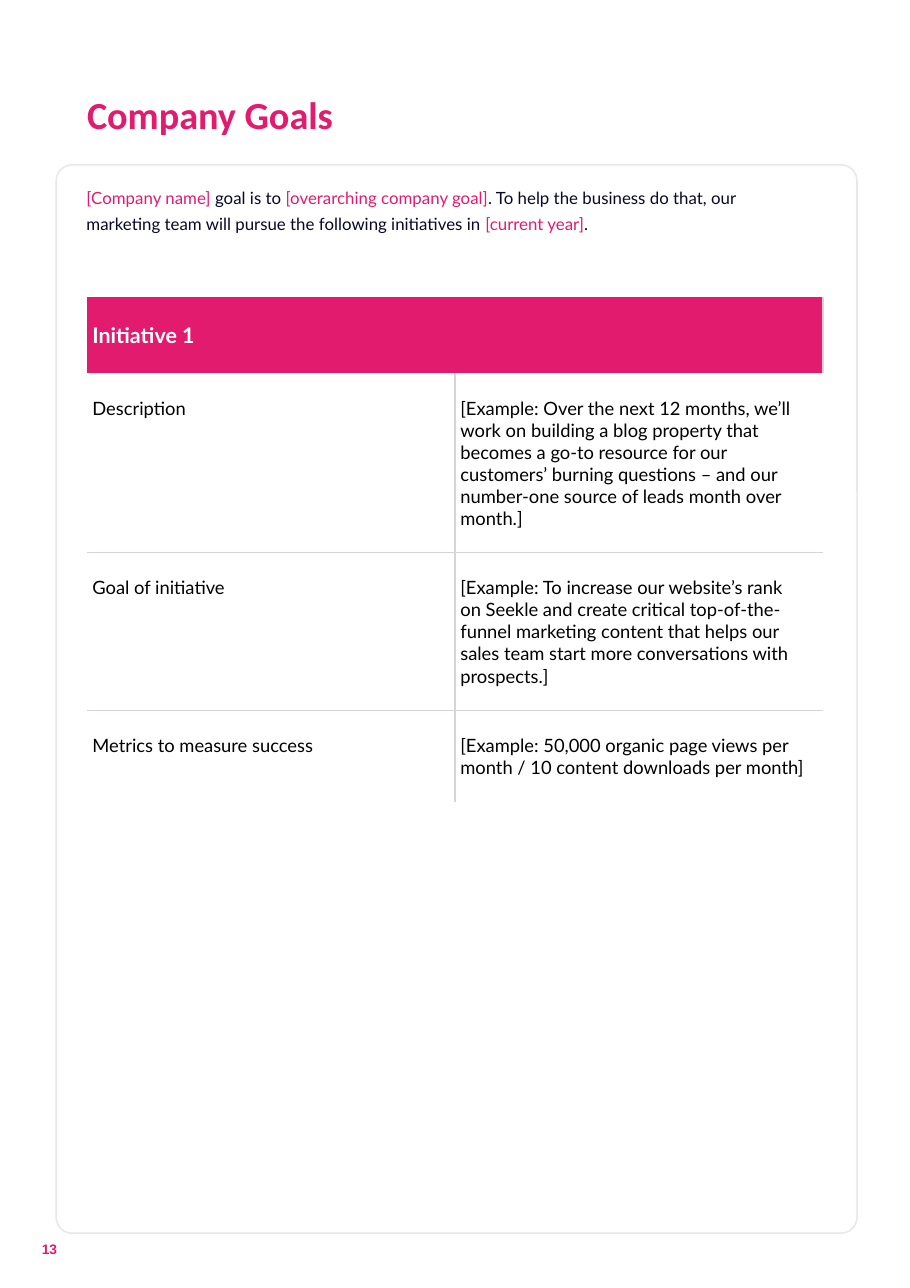
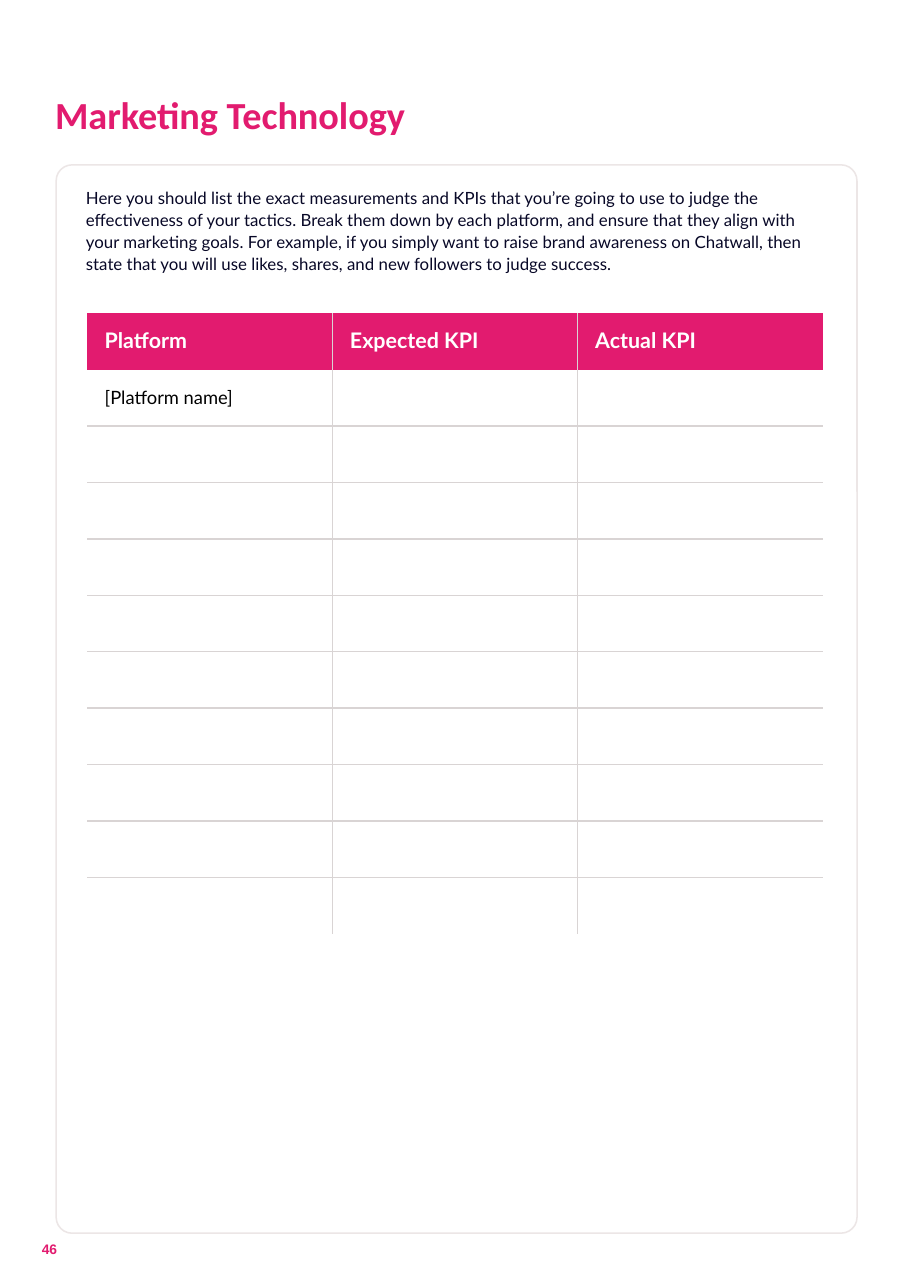
from lxml import etree
from pptx import Presentation
from pptx import util as u
from pptx.dml.color import RGBColor
from pptx.enum import shapes, text
from pptx.oxml.ns import qn

COLORS = {"accent": "E21B6F", "ink": "080827", "cell": "000000",
          "white": "FFFFFF", "frame": "ECE6E6", "rule": "D9D4D4"}
WIDTH, HEIGHT = u.Inches(8.26), u.Inches(11.69)
GRID = 100  # columns across and rows down the page
NO_STYLE = "{2D5ABB26-0587-4C30-8999-92F81FD0307C}"
TABLE_LEFT, TABLE_WIDTH = 9.56, 80.87


def col(n):
    return u.Emu(round(WIDTH * n / GRID))


def row(n):
    return u.Emu(round(HEIGHT * n / GRID))


def rgb(name):
    return RGBColor.from_string(COLORS[name])


class Page:
    """Holds the shared style and the current slide."""

    def __init__(self, prs, title, title_left, number):
        self.slide = prs.slides.add_slide(prs.slide_layouts[5])
        self.panel()
        self.title(title, title_left)
        self.textbox([(str(number), "accent")], 4.6, 96.5, 3, 1.28, 9,
                     font="Arial", bold=True, spacing=u.Pt(9.2), top=0)

    def style(self, r, size, color, font="Lato", bold=False):
        r.font.name, r.font.size, r.font.bold = font, u.Pt(size), bold
        r.font.color.rgb = rgb(color)

    def frame(self, tf, top):
        tf.word_wrap = True
        tf.auto_size = text.MSO_AUTO_SIZE.NONE
        tf.vertical_anchor = text.MSO_ANCHOR.TOP
        tf.margin_left = tf.margin_right = tf.margin_bottom = 0
        tf.margin_top = row(top)

    def panel(self):
        sp = self.slide.shapes.add_shape(
            shapes.MSO_SHAPE.ROUNDED_RECTANGLE,
            col(6.17), row(12.8), col(88.01), row(82.95))
        sp.adjustments[0] = 0.02
        sp.shadow.inherit = False
        sp.fill.background()
        sp.line.color.rgb = rgb("frame")
        sp.line.width = u.Pt(1)

    def title(self, words, left):
        sp = self.slide.shapes.title
        sp.left, sp.top = col(left), row(7)
        sp.width, sp.height = col(66.2), row(3.76)
        self.frame(sp.text_frame, 0.1)
        sp.text_frame.text = words
        p = sp.text_frame.paragraphs[0]
        p.alignment = text.PP_ALIGN.LEFT
        self.style(p.runs[0], 25, "accent", "Calibri", True)

    def textbox(self, parts, left, y, width, height, size,
                font="Lato", bold=False, spacing=1.0, top=0.1):
        """Adds one paragraph made of (words, colour) parts."""
        sp = self.slide.shapes.add_textbox(col(left), row(y), col(width), row(height))
        self.frame(sp.text_frame, top)
        p = sp.text_frame.paragraphs[0]
        p.line_spacing = spacing
        for words, color in parts:
            r = p.add_run()
            r.text = words
            self.style(r, size, color, font, bold)

    def table(self, y, heights, columns):
        """Adds a table whose body has inner rules and no outer border."""
        tbl = self.slide.shapes.add_table(
            len(heights), columns, col(TABLE_LEFT), row(y),
            col(TABLE_WIDTH), row(sum(heights))).table
        tbl.first_row = tbl.horz_banding = False
        tbl._tbl.tblPr.find(qn("a:tableStyleId")).text = NO_STYLE
        for column in tbl.columns:
            column.width = col(TABLE_WIDTH / columns)
        last_row, last_col = len(heights) - 1, columns - 1
        for i, height in enumerate(heights):
            tbl.rows[i].height = row(height)
            for j in range(columns):
                c = tbl.cell(i, j)
                self.rules(c, {"L": j > 0, "R": j < last_col,
                               "T": i > 1, "B": 0 < i < last_row})
                if i == 0:
                    c.fill.solid()
                    c.fill.fore_color.rgb = rgb("accent")
                else:
                    c.fill.background()
        return tbl

    def rules(self, c, sides):
        tc_pr = c._tc.get_or_add_tcPr()
        for side, shown in sides.items():
            if shown:
                ln = etree.SubElement(tc_pr, qn("a:ln" + side), w=str(u.Pt(1)))
                fill = etree.SubElement(ln, qn("a:solidFill"))
                etree.SubElement(fill, qn("a:srgbClr"), val=COLORS["rule"])

    def cell(self, c, words, left, top, right=0, header=False):
        c.margin_left, c.margin_right = col(left), col(right)
        c.margin_top, c.margin_bottom = row(top), 0
        c.text_frame.text = words
        for p in c.text_frame.paragraphs:
            for r in p.runs:
                if header:
                    self.style(r, 14, "white", bold=True)
                else:
                    self.style(r, 12, "cell")


def company_goals(prs):
    page = Page(prs, "Company Goals", 9.56, 13)
    page.textbox([
        ("[Company name] ", "accent"), ("goal is to ", "ink"),
        ("[overarching company goal]", "accent"),
        (". To help the business do that, our marketing team will pursue "
         "the following initiatives in ", "ink"),
        ("[current year]", "accent"), (".", "ink"),
    ], 9.5, 14.03, 74.58, 4.28, 11, spacing=1.29)
    # label, example, row height, right margin of the example
    initiative = [
        ("Description",
         "[Example: Over the next 12 months, we’ll work on building a blog "
         "property that becomes a go-to resource for our customers’ burning "
         "questions – and our\nnumber-one source of leads month over month.]",
         13.94, 3),
        ("Goal of initiative",
         "[Example: To increase our website’s rank on Seekle and create "
         "critical top-of-the-funnel marketing content that helps our sales "
         "team start more conversations with prospects.]", 12.23, 3),
        ("Metrics to measure success",
         "[Example: 50,000 organic page views per month / 10 content "
         "downloads per month]", 7.1, 1),
    ]
    tbl = page.table(23.08, [5.9] + [item[2] for item in initiative], 2)
    tbl.cell(0, 0).merge(tbl.cell(0, 1))
    page.cell(tbl.cell(0, 0), "Initiative 1", 0.6, 1.93, header=True)
    for i, (label, example, _, right) in enumerate(initiative, 1):
        page.cell(tbl.cell(i, 0), label, 0.6, 1.86)
        page.cell(tbl.cell(i, 1), example, 0.6, 1.86, right)


def marketing_technology(prs):
    page = Page(prs, "Marketing Technology", 6.05, 46)
    page.textbox([(
        "Here you should list the exact measurements and KPIs that you’re "
        "going to use to judge the effectiveness of your tactics. Break them "
        "down by each platform, and ensure that they align with your "
        "marketing goals. For example, if you simply want to raise brand "
        "awareness on Chatwall, then state that you will use likes, shares, "
        "and new followers to judge success.", "ink")],
        9.44, 14.37, 80.63, 7.1, 11, spacing=1.09)
    tbl = page.table(24.33, [4.38] * 11, 3)
    for j, heading in enumerate(["Platform", "Expected KPI", "Actual KPI"]):
        page.cell(tbl.cell(0, j), heading, 1.94, 1.11, header=True)
    page.cell(tbl.cell(1, 0), "[Platform name]", 1.94, 1.28)


def main():
    prs = Presentation()
    prs.slide_width, prs.slide_height = WIDTH, HEIGHT
    company_goals(prs)
    marketing_technology(prs)
    prs.save("out.pptx")


if __name__ == "__main__":
    main()
